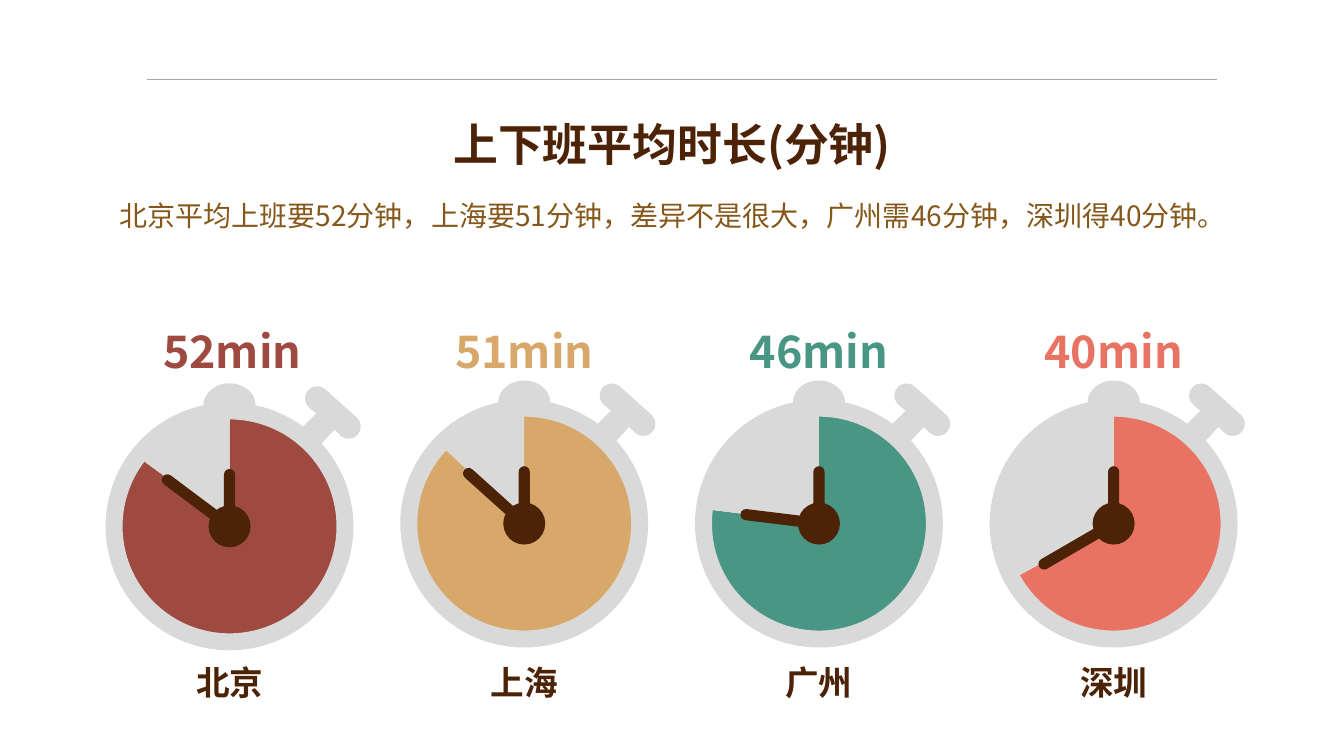
from dataclasses import dataclass
from math import cos, radians, sin

from lxml.etree import SubElement
from pptx import Presentation
from pptx.chart.data import CategoryChartData
from pptx.dml.color import RGBColor
from pptx.enum.chart import XL_CHART_TYPE
from pptx.enum.shapes import MSO_CONNECTOR, MSO_SHAPE
from pptx.enum.text import MSO_ANCHOR, MSO_AUTO_SIZE, PP_ALIGN
from pptx.oxml import parse_xml
from pptx.oxml.ns import nsdecls, qn
from pptx.util import Pt


@dataclass(frozen=True)
class Theme:
    font: str = "Noto Sans CJK SC"
    dark: str = "4D2307"
    brown: str = "855719"
    grey: str = "D9D9D9"
    rule: str = "A6A6A6"
    head: int = 32
    city: int = 24
    body: int = 20
    tick: int = 10


THEME = Theme()

# City, minutes, share of the dial, colour, hand angle, hand reach, drop
CITIES = [
    ("北京", 52, 85, "9E4A40", 306.8, 32, 2),
    ("上海", 51, 87, "D8A86A", 312, 30, 0),
    ("广州", 46, 77, "489683", 277, 29, 0),
    ("深圳", 40, 67, "E97362", 239.9, 34, 0),
]

# Case outline: centre, radii, and angles clockwise from the top
OUTER = [
    (0, 0, 88.5, 88.5, (48, 90, 180, 270, 348)),
    (0, -86.5, 18.6, 15.7, (-90, 0, 90)),
    (0, 0, 88.5, 88.5, (12, 36.4)),
    (61.9, -80.6, 0, 0, (0,)),
    (62.6, -91.4, 8.7, 8.7, (222, 402)),
    (85, -71.3, 8.7, 8.7, (42, 90, 222)),
    (74.9, -69.1, 0, 0, (0,)),
]
HOLE = [(0, 0, 76.4, 76.4, (360, 270, 180, 90, 0))]


def rgb(code):
    return RGBColor.from_string(code)


def write(shape, text, size, color, bold=False, wrap=True, space=1.0):
    frame = shape.text_frame
    frame.auto_size = MSO_AUTO_SIZE.NONE
    frame.word_wrap = wrap
    frame.vertical_anchor = MSO_ANCHOR.TOP
    para = frame.paragraphs[0]
    para.alignment = PP_ALIGN.CENTER
    para.line_spacing = space
    para.space_before = Pt(0)
    run = para.add_run()
    run.text = text
    font = run.font
    font.name, font.size, font.bold = THEME.font, Pt(size), bold
    font.color.rgb = rgb(color)
    SubElement(font._element, qn("a:ea")).set("typeface", THEME.font)


def place(shape, x, y, w, h):
    shape.left, shape.top, shape.width, shape.height = Pt(x), Pt(y), Pt(w), Pt(h)


def label(slide, text, mid, top, w, h, size, color):
    box = slide.shapes.add_textbox(Pt(mid - w / 2), Pt(top), Pt(w), Pt(h))
    write(box, text, size, color, bold=True, wrap=False)


def paint(shape, color):
    shape.shadow.inherit = False
    shape.fill.solid()
    shape.fill.fore_color.rgb = rgb(color)
    shape.line.fill.background()


def solid(slide, kind, x, y, w, h, turn=0):
    """Add a dark clock part centred on x, y."""
    part = slide.shapes.add_shape(kind, Pt(x - w / 2), Pt(y - h / 2), Pt(w), Pt(h))
    paint(part, THEME.dark)
    part.rotation = turn
    if kind == MSO_SHAPE.ROUNDED_RECTANGLE:
        part.adjustments[0] = 0.5


def dial(slide, x, y, w, h, share, color):
    data = CategoryChartData()
    data.categories = ["1", "2"]
    data.add_series("Series 1", (share, 100 - share))
    chart = slide.shapes.add_chart(
        XL_CHART_TYPE.PIE, Pt(x), Pt(y), Pt(w), Pt(h), data).chart
    chart.has_legend = chart.has_title = False
    chart.font.name, chart.font.size = THEME.font, Pt(THEME.tick)
    chart.font.color.rgb = rgb("000000")
    plot = chart.plots[0]
    plot.vary_by_categories = False
    for i, tone in enumerate((color, THEME.grey)):
        look = plot.series[0].points[i].format
        look.fill.solid()
        look.fill.fore_color.rgb = rgb(tone)
        look.line.fill.background()
    # Keep the edge of the pie under the case ring
    area = chart._chartSpace.chart.plotArea
    for old in area.findall(qn("c:layout")):
        area.remove(old)
    size = 168
    spots = {"x": (1 - size / w) / 2, "y": (1 - size / h) / 2,
             "w": size / w, "h": size / h}
    rows = "".join(f'<c:{k} val="{v:.3f}"/>' for k, v in spots.items())
    area.insert(0, parse_xml(
        f'<c:layout {nsdecls("c")}><c:manualLayout><c:layoutTarget val="inner"/>'
        f'<c:xMode val="edge"/><c:yMode val="edge"/>{rows}'
        "</c:manualLayout></c:layout>"))


def trace(x, y, ring):
    """Corner points of a ring, each with the arc that leads to it."""
    dots = []
    for cx, cy, rx, ry, stops in ring:
        for i, stop in enumerate(stops):
            t = radians(stop)
            spot = Pt(x + cx + rx * sin(t)), Pt(y + cy - ry * cos(t))
            last = stops[i - 1]
            bend = (Pt(rx), Pt(ry), last - 90, stop - last) if i else None
            dots.append((spot, bend))
    return dots


def case(slide, x, y):
    """Ring, top cap and side crown as one outline around x, y."""
    rings = [trace(x, y, ring) for ring in (OUTER, HOLE)]
    form = slide.shapes.build_freeform(*rings[0][0][0])
    for i, ring in enumerate(rings):
        if i:
            form.move_to(*ring[0][0])
        form.add_line_segments([spot for spot, _ in ring[1:]], close=True)
    shape = form.convert_to_shape()
    paint(shape, THEME.grey)
    # Bend the straight sides into arcs
    sides = list(shape._element.iter(qn("a:lnTo")))
    bends = [bend for ring in rings for _, bend in ring[1:]]
    for side, bend in zip(sides, bends):
        if bend:
            rx, ry, start, swing = bend
            side.getparent().replace(side, parse_xml(
                f'<a:arcTo {nsdecls("a")} wR="{rx}" hR="{ry}" '
                f'stAng="{round(start % 360 * 60000)}" '
                f'swAng="{round(swing * 60000)}"/>'))


def watch(slide, x, y, w, h, row):
    """One city column: minutes, stopwatch and name."""
    city, mins, share, color, turn, reach, drop = row
    mid, hub = x + w / 2, y + 146.5 + drop
    dial(slide, x, y + 56, w, 181, share, color)
    case(slide, mid, hub)
    # Hub and hands
    solid(slide, MSO_SHAPE.OVAL, mid, hub, 30, 30)
    bar = MSO_SHAPE.ROUNDED_RECTANGLE
    solid(slide, bar, mid, hub - 20.5, 8, 41)
    way = radians(turn)
    solid(slide, bar, mid + reach * sin(way), hub - reach * cos(way), 8, 55, turn)
    # Labels
    label(slide, f"{mins}min", mid + drop, y, 117, 46, THEME.head, color)
    label(slide, city, mid, y + h - 36, 63, 36, THEME.city, THEME.dark)


def header(slide, x, y, w):
    line = slide.shapes.add_connector(
        MSO_CONNECTOR.STRAIGHT, Pt(x + 32), Pt(y), Pt(x + 796), Pt(y))
    line.line.color.rgb = rgb(THEME.rule)
    line.line.width = Pt(0.5)
    SubElement(line._element.spPr, qn("a:effectLst"))
    title, lead = slide.placeholders
    place(title, x + 13.5, y + 23, w - 28, 46)
    write(title, "上下班平均时长(分钟)", THEME.head, THEME.dark, bold=True)
    place(lead, x, y + 69, w, 40)
    write(lead, "北京平均上班要52分钟，上海要51分钟，差异不是很大，"
          "广州需46分钟，深圳得40分钟。", THEME.body, THEME.brown, space=1.5)


def main():
    deck = Presentation()
    deck.slide_width, deck.slide_height = Pt(960), Pt(540)
    slide = deck.slides.add_slide(deck.slide_layouts[0])
    header(slide, 73, 57, 815)
    for i, row in enumerate(CITIES):
        watch(slide, 70.5 + 210.5 * i, 227.5, 187, 278, row)
    deck.save("out.pptx")


if __name__ == "__main__":
    main()
